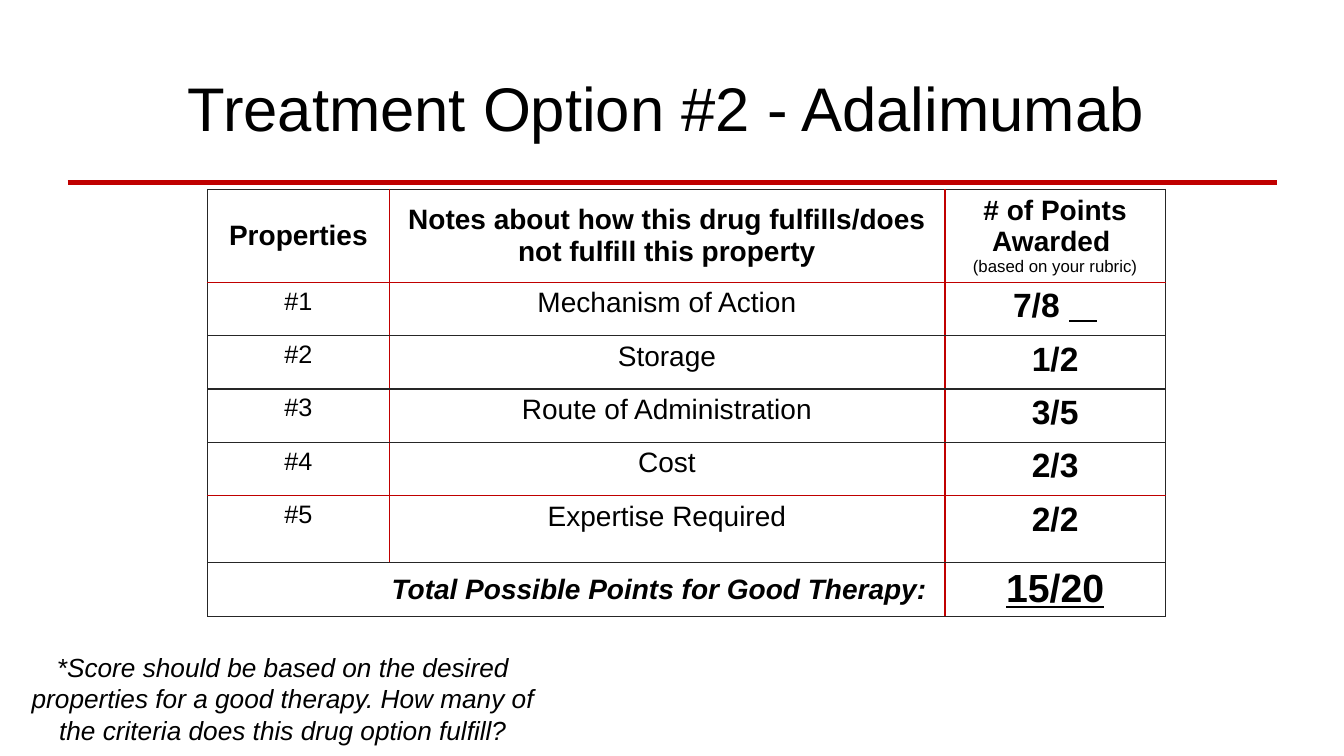
from lxml.etree import SubElement
from pptx import Presentation
from pptx.dml.color import RGBColor
from pptx.enum.shapes import MSO_CONNECTOR as Connector
from pptx.enum.text import MSO_ANCHOR as Anchor, MSO_AUTO_SIZE as AutoSize, PP_ALIGN as Align
from pptx.oxml.ns import qn
from pptx.util import Inches, Pt

BLACK = RGBColor(0x00, 0x00, 0x00)
RED = RGBColor(0xC0, 0x00, 0x00)
DARK = RGBColor(0x26, 0x26, 0x26)
FONT = "Arial"

COLUMN_WIDTHS = [1.8, 5.51, 2.19]
ROW_HEIGHTS = [0.92, 0.53, 0.53, 0.53, 0.53, 0.66, 0.54]
RED_ROW_LINES = {1, 5}
PROPERTIES = [
    ("Mechanism of Action", "7/8 "),
    ("Storage", "1/2"),
    ("Route of Administration", "3/5"),
    ("Cost", "2/3"),
    ("Expertise Required", "2/2"),
]


def format_para(para, size, align=Align.CENTER, bold=False, italic=False, underline=False):
    para.alignment = align
    for span in para.runs:
        font = span.font
        font.name, font.size, font.color.rgb = FONT, Pt(size), BLACK
        font.bold, font.italic, font.underline = bold, italic, underline


def fill_cell(cell, text, size, anchor=Anchor.TOP, **style):
    cell.text_frame.text = text
    cell.vertical_anchor = anchor
    format_para(cell.text_frame.paragraphs[0], size, **style)


def set_border(cell, side, color, width):
    """Draw one edge of a cell; side is L, R, T or B."""
    line = SubElement(cell._tc.get_or_add_tcPr(), qn(f"a:ln{side}"), w=str(Pt(width)))
    fill = SubElement(line, qn("a:solidFill"))
    SubElement(fill, qn("a:srgbClr"), val=str(color))


def row_line_color(index):
    return RED if index in RED_ROW_LINES else DARK


def column_line(index):
    """Colour and width of the vertical line left of the given column."""
    if index in (0, len(COLUMN_WIDTHS)):
        return DARK, 1
    return RED, 1.5 if index == 2 else 1


def draw_borders(table):
    for row in range(len(ROW_HEIGHTS)):
        for column in range(len(COLUMN_WIDTHS)):
            cell = table.cell(row, column)
            set_border(cell, "L", *column_line(column))
            right = 2 if cell.is_merge_origin else column + 1
            set_border(cell, "R", *column_line(right))
            set_border(cell, "T", row_line_color(row), 1)
            set_border(cell, "B", row_line_color(row + 1), 1)
            cell.fill.background()


def add_title(page, text):
    title = page.shapes.title
    title.left, title.top = Inches(1.09), Inches(0.62)
    title.width, title.height = Inches(11.04), Inches(0.88)
    frame = title.text_frame
    frame.text = text
    frame.auto_size = AutoSize.NONE
    frame.vertical_anchor = Anchor.MIDDLE
    format_para(frame.paragraphs[0], 44)


def add_rule(page):
    rule = page.shapes.add_connector(
        Connector.STRAIGHT, Inches(0.67), Inches(1.81), Inches(12.67), Inches(1.81))
    rule.line.color.rgb = RED
    rule.line.width = Pt(3)
    SubElement(rule._element.spPr, qn("a:effectLst"))


def add_score_table(page):
    table = page.shapes.add_table(
        len(ROW_HEIGHTS), len(COLUMN_WIDTHS), Inches(2.06), Inches(1.88),
        Inches(sum(COLUMN_WIDTHS)), Inches(sum(ROW_HEIGHTS))).table
    table.first_row = table.horz_banding = False
    for column, width in zip(table.columns, COLUMN_WIDTHS):
        column.width = Inches(width)
    for row, height in zip(table.rows, ROW_HEIGHTS):
        row.height = Inches(height)

    headings = ["Properties",
                "Notes about how this drug fulfills/does not fulfill this property",
                "# of Points Awarded "]
    for column, heading in enumerate(headings):
        fill_cell(table.cell(0, column), heading, 20, Anchor.MIDDLE, bold=True)
    rubric = table.cell(0, 2).text_frame.add_paragraph()
    rubric.text = "(based on your rubric)"
    format_para(rubric, 12)

    for row, (name, points) in enumerate(PROPERTIES, start=1):
        fill_cell(table.cell(row, 0), f"#{row}", 18)
        fill_cell(table.cell(row, 1), name, 20)
        fill_cell(table.cell(row, 2), points, 24, bold=True)
    first_score = table.cell(1, 2).text_frame.paragraphs[0]
    blank = first_score.add_run()
    blank.text = "   "
    format_para(first_score, 24, bold=True)
    blank.font.underline = True

    total = len(ROW_HEIGHTS) - 1
    table.cell(total, 0).merge(table.cell(total, 1))
    fill_cell(table.cell(total, 0), "Total Possible Points for Good Therapy: ", 20,
              Anchor.MIDDLE, align=Align.RIGHT, bold=True, italic=True)
    fill_cell(table.cell(total, 2), "15/20", 28, bold=True, underline=True)
    draw_borders(table)


def add_note(page, text):
    box = page.shapes.add_textbox(Inches(0.12), Inches(6.41), Inches(5.37), Inches(1.05))
    frame = box.text_frame
    frame.word_wrap = True
    frame.auto_size = AutoSize.SHAPE_TO_FIT_TEXT
    frame.text = text
    format_para(frame.paragraphs[0], 18.7, italic=True)


def main():
    deck = Presentation()
    deck.slide_width, deck.slide_height = Inches(13.33), Inches(7.5)
    page = deck.slides.add_slide(deck.slide_layouts[5])
    add_rule(page)
    add_title(page, "Treatment Option #2 - Adalimumab")
    add_score_table(page)
    add_note(page, "*Score should be based on the desired properties for a good therapy. "
                   "How many of the criteria does this drug option fulfill?")
    deck.save("out.pptx")


if __name__ == "__main__":
    main()
